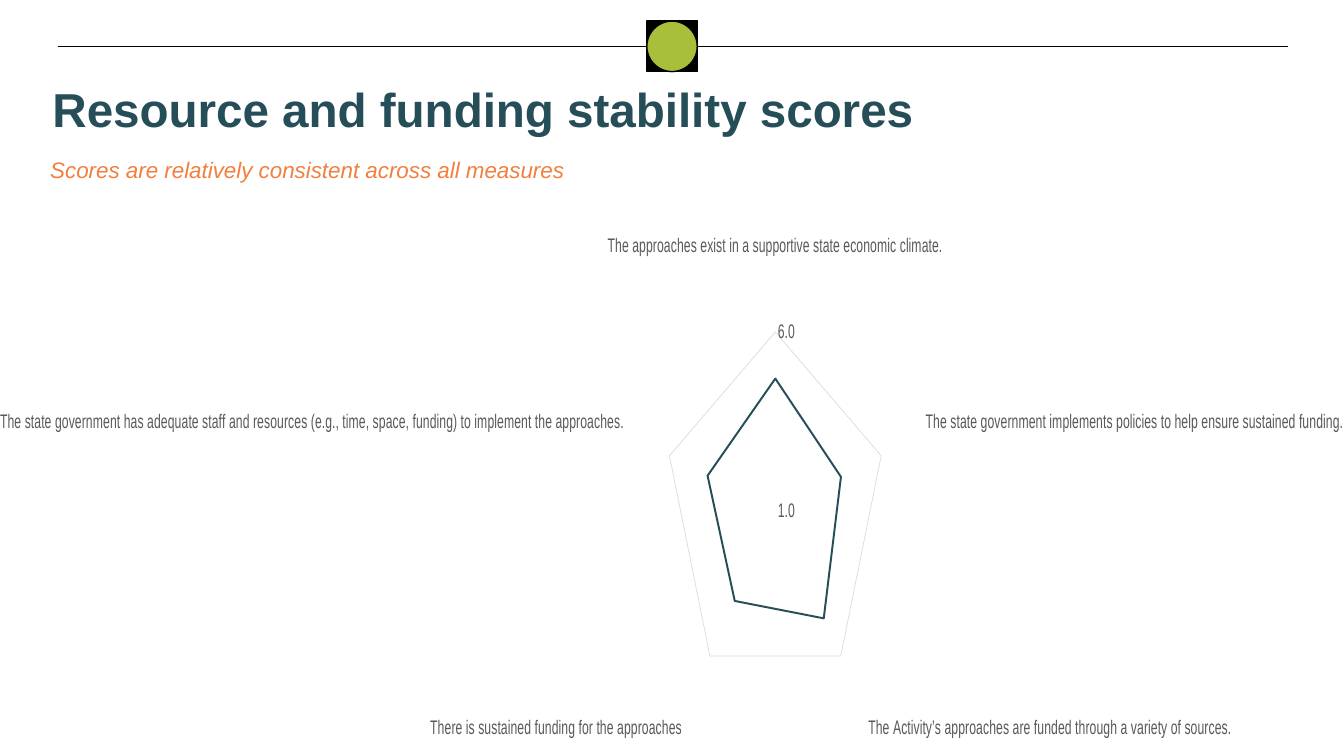
from dataclasses import dataclass

import pptx
import pptx.chart.data
import pptx.dml.color
import pptx.enum.chart
import pptx.enum.shapes
import pptx.enum.text
import pptx.oxml
import pptx.util

SHAPE = pptx.enum.shapes.MSO_SHAPE
TICK = pptx.enum.chart.XL_TICK_MARK


@dataclass(frozen=True)
class Theme:
    font: str = "Arial"
    chart_font: str = "TeX Gyre Schola"
    black: str = "000000"
    teal: str = "264E59"
    orange: str = "F27F3E"
    green: str = "A7BF39"
    label_gray: str = "595959"
    grid_gray: str = "D9D9D9"
    title_size: float = 34
    subtitle_size: float = 16
    label_size: float = 14
    chart_size: float = 10
    hairline: float = 0.75
    outline: float = 1
    series_line: float = 2.25


class ScoreSlide:
    """Places elements on a grid of 100 columns by 100 rows."""

    def __init__(self, deck, theme):
        self.deck, self.theme = deck, theme
        self.slide = deck.slides.add_slide(deck.slide_layouts[5])

    def x(self, columns):
        return round(self.deck.slide_width * columns / 100)

    def y(self, rows):
        return round(self.deck.slide_height * rows / 100)

    def box(self, left, top, width, height):
        return self.x(left), self.y(top), self.x(width), self.y(height)

    def style_font(self, font, size, color, name=None, bold=False, italic=False):
        font.name = name or self.theme.font
        font.size = pptx.util.Pt(size)
        font.bold, font.italic = bold, italic
        font.color.rgb = pptx.dml.color.RGBColor.from_string(color)

    def style_line(self, line, color, width):
        line.color.rgb = pptx.dml.color.RGBColor.from_string(color)
        line.width = pptx.util.Pt(width)

    def rule(self, left, right, row):
        header_rule = self.slide.shapes.add_connector(
            pptx.enum.shapes.MSO_CONNECTOR.STRAIGHT,
            self.x(left), self.y(row), self.x(right), self.y(row))
        self.style_line(header_rule.line, self.theme.black, self.theme.hairline)
        header_rule._element.spPr.append(
            pptx.oxml.parse_xml(
                '<a:effectLst xmlns:a="http://schemas.openxmlformats.org/drawingml/2006/main"/>'))

    def badge(self, preset, fill, *place):
        emblem = self.slide.shapes.add_shape(preset, *self.box(*place))
        emblem.shadow.inherit = False
        emblem.fill.solid()
        emblem.fill.fore_color.rgb = pptx.dml.color.RGBColor.from_string(fill)
        self.style_line(emblem.line, self.theme.black, self.theme.outline)

    def title(self, text, *place):
        heading = self.slide.shapes.title
        heading.left, heading.top, heading.width, heading.height = self.box(*place)
        frame = heading.text_frame
        frame.text = text
        frame.auto_size = pptx.enum.text.MSO_AUTO_SIZE.NONE
        frame.vertical_anchor = pptx.enum.text.MSO_ANCHOR.MIDDLE
        paragraph = frame.paragraphs[0]
        paragraph.alignment = pptx.enum.text.PP_ALIGN.LEFT
        paragraph.space_after = pptx.util.Pt(8)
        self.style_font(paragraph.font, self.theme.title_size, self.theme.teal, bold=True)

    def subtitle(self, text, *place):
        frame = self.slide.shapes.add_textbox(*self.box(*place)).text_frame
        frame.word_wrap = True
        frame.auto_size = pptx.enum.text.MSO_AUTO_SIZE.SHAPE_TO_FIT_TEXT
        frame.text = text
        self.style_font(frame.paragraphs[0].font, self.theme.subtitle_size,
                        self.theme.orange, italic=True)

    def radar(self, scores, *place):
        theme = self.theme
        score_data = pptx.chart.data.CategoryChartData(number_format="0.0")
        score_data.categories = list(scores)
        score_data.add_series("Series 1", list(scores.values()))
        chart = self.slide.shapes.add_chart(
            pptx.enum.chart.XL_CHART_TYPE.RADAR, *self.box(*place), score_data).chart
        chart.has_title = chart.has_legend = False
        self.style_font(chart.font, theme.chart_size, theme.black, theme.chart_font)

        plot = chart.plots[0]
        plot.vary_by_categories = False
        self.style_line(plot.series[0].format.line, theme.teal, theme.series_line)

        measures, scale = chart.category_axis, chart.value_axis
        for axis in (measures, scale):
            axis.major_tick_mark = axis.minor_tick_mark = TICK.NONE
            self.style_font(axis.tick_labels.font, theme.label_size, theme.label_gray)
        measures.has_major_gridlines = False
        self.style_line(measures.format.line, theme.grid_gray, theme.hairline)
        scale.minimum_scale, scale.maximum_scale, scale.major_unit = 1, 7, 5
        scale.has_major_gridlines = True
        self.style_line(scale.major_gridlines.format.line, theme.grid_gray, theme.hairline)
        scale.format.line.fill.background()
        scale.tick_labels.number_format = "0.0"
        scale.tick_labels.number_format_is_linked = False


def main():
    deck = pptx.Presentation()
    deck.slide_width = pptx.util.Inches(13.33)
    deck.slide_height = pptx.util.Inches(7.5)
    theme = Theme()
    page = ScoreSlide(deck, theme)

    page.rule(4.28, 95.8, 6.13)
    for preset, fill in ((SHAPE.RECTANGLE, theme.black), (SHAPE.OVAL, theme.green)):
        page.badge(preset, fill, 48.13, 2.8, 3.75, 6.67)
    page.title("Resource and funding stability scores", 3.15, 9.73, 93.75, 9.33)
    page.subtitle("Scores are relatively consistent across all measures", 3, 20, 47.34, 4.93)
    page.radar({
        "The approaches exist in a supportive state economic climate.": 4.7,
        "The state government implements policies to help ensure sustained funding.": 4.1,
        "The Activity’s approaches are funded through a variety of sources.": 4.7,
        "There is sustained funding for the approaches": 4.1,
        "The state government has adequate staff and resources "
        "(e.g., time, space, funding) to implement the approaches.": 4.2,
    }, 0, 23.6, 100, 81.6)
    deck.save("out.pptx")


if __name__ == "__main__":
    main()
